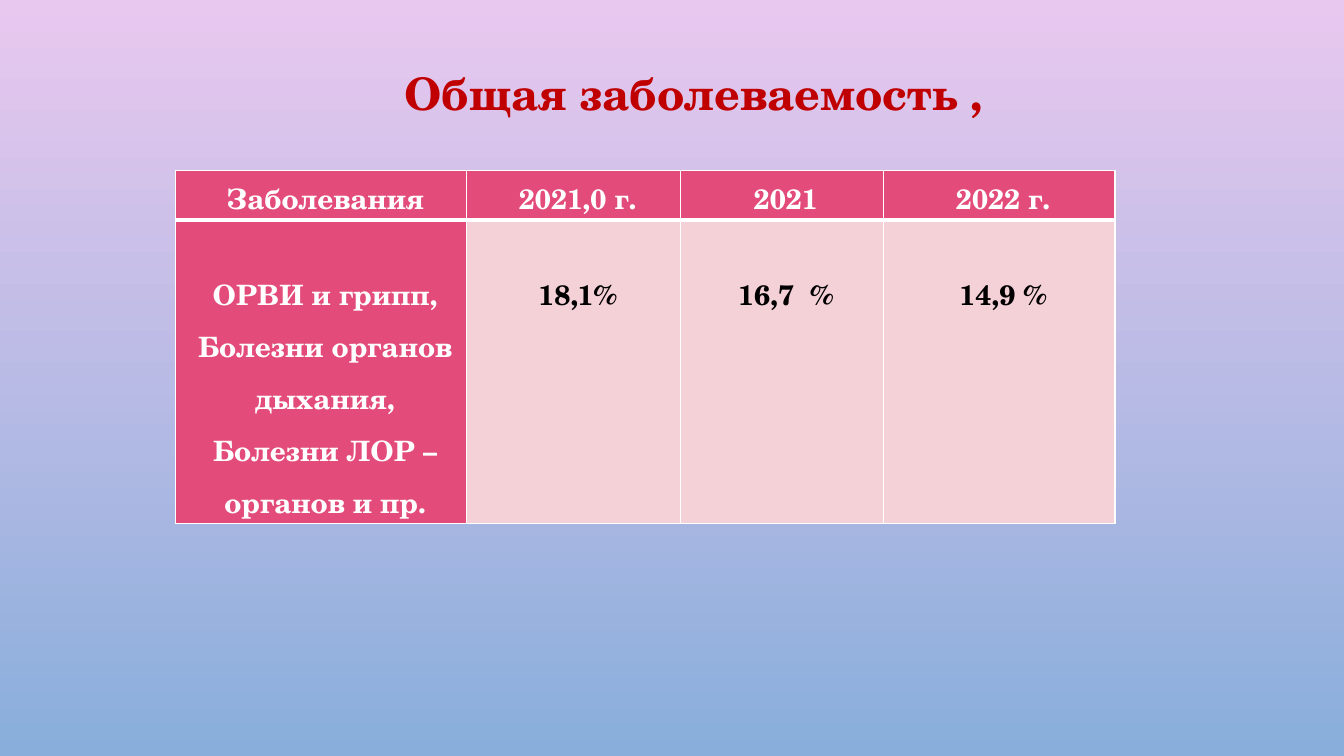
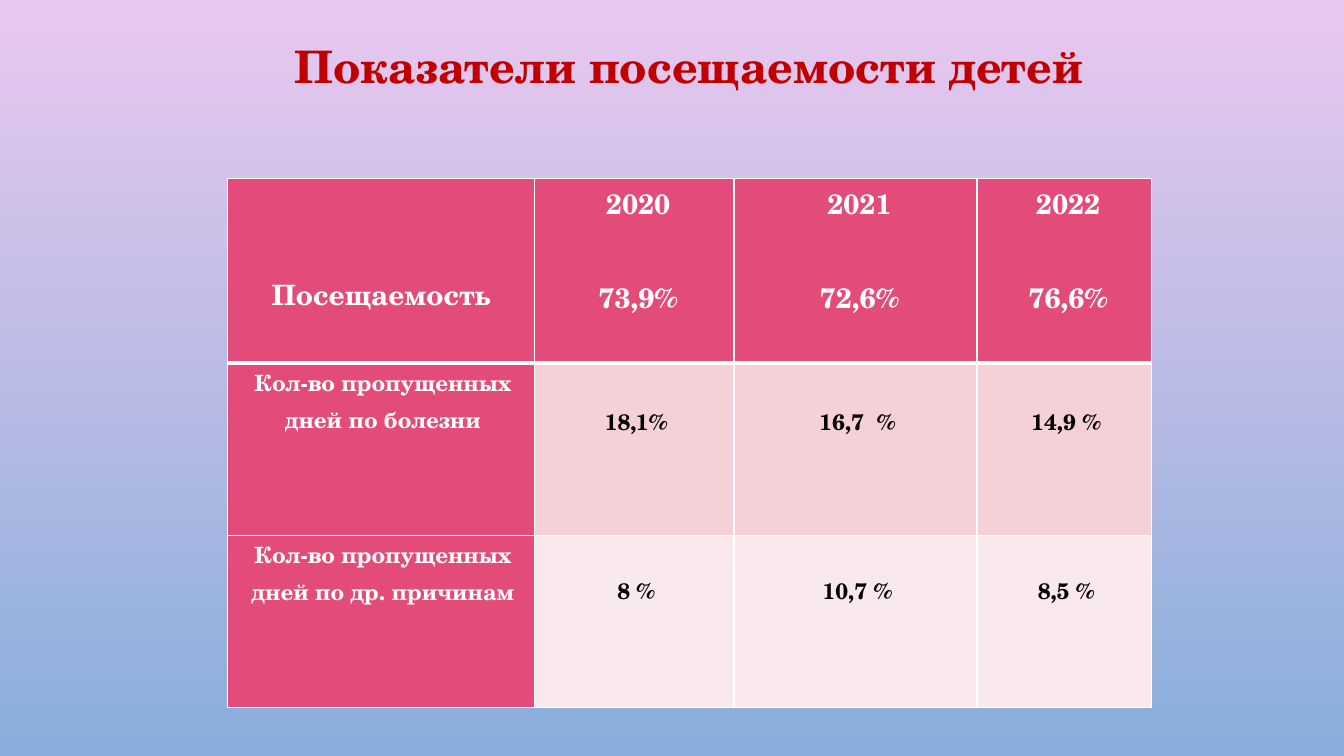
from dataclasses import dataclass

from lxml import etree
from pptx import Presentation
from pptx.dml.color import RGBColor
from pptx.enum.text import MSO_ANCHOR, MSO_AUTO_SIZE, PP_ALIGN
from pptx.oxml.ns import qn
from pptx.util import Inches, Pt

CENTER = PP_ALIGN.CENTER
MIDDLE = MSO_ANCHOR.MIDDLE
TOP = MSO_ANCHOR.TOP
FIXED = MSO_AUTO_SIZE.NONE

FACE = "TeX Gyre Schola"
WHITE, BLACK, RED = "FFFFFF", "000000", "C00000"
PINK, ROSE, PALE = "E34B7A", "F4D0D7", "FAE9EC"
SKY = ("E9C8EF", "89AEDB")
THIN, THICK = 1, 3
TITLE_SIZE = 32
FRAME = {"word_wrap": True, "auto_size": FIXED, "vertical_anchor": MIDDLE}
CELL = {
    "margin_left": Inches(0.07),
    "margin_right": Inches(0.07),
    "margin_bottom": 0,
    "vertical_anchor": TOP,
}


@dataclass(frozen=True)
class Row:
    texts: tuple[str, ...]
    height: float
    fill: str
    size: int = 20
    pitch: float = 1.2
    indent: float = 0.08
    drops: tuple[float, float] = (0, 0)
    gap: float = 0


@dataclass(frozen=True)
class Page:
    title: str
    box: tuple[float, float, float, float]
    shift: float
    left: float
    top: float
    widths: tuple[float, ...]
    rows: tuple[Row, ...]


PAGES = (
    Page(
        "Общая заболеваемость , ", (3.01, 0.6, 7.37, 0.64), 0.5,
        1.74, 1.69, (2.89, 2.12, 2.01, 2.3),
        (
            Row(("Заболевания", "2021,0 г.", "2021", "2022 г."), 0.49, PINK, pitch=1.15),
            Row(
                ("ОРВИ и грипп, Болезни органов дыхания, Болезни ЛОР – органов и пр.",
                 "18,1%", "16,7  %", "14,9 %"),
                3.01, ROSE, drops=(0.43, 0.43),
            ),
        ),
    ),
    Page(
        "Показатели посещаемости детей", (2.26, 0.33, 9.15, 0.64), 0,
        2.26, 1.77, (3.04, 1.98, 2.41, 1.73),
        (
            Row(("Посещаемость ", "2020\n73,9%", "2021\n72,6%", "2022\n76,6%"),
                1.83, PINK, pitch=1.07, drops=(0.9, 0), gap=34),
            Row(("Кол-во пропущенных дней по болезни", "18,1%", "16,7  %", "14,9 %"),
                1.71, ROSE, 16, 1.07, 0.04, (0, 0.39)),
            Row(("Кол-во пропущенных дней по др. причинам", "8 %", "10,7 %", "8,5 %"),
                1.71, PALE, 16, 1.07, 0.04, (0, 0.35)),
        ),
    ),
)


def tint(value: str) -> RGBColor:
    return RGBColor.from_string(value)


def apply(target, values: dict) -> None:
    for name, value in values.items():
        setattr(target, name, value)


def style(para, size: int, hue: str, pitch: float = 1, indent: float = 0, shift: float = 0) -> None:
    props = para._p.get_or_add_pPr()
    props.set("marL", str(Inches(indent)))
    props.set("indent", str(Inches(shift)))
    apply(para, {"alignment": CENTER, "line_spacing": pitch})
    for run in para.runs:
        apply(run.font, {"name": FACE, "size": Pt(size), "bold": True})
        run.font.color.rgb = tint(hue)


def edge(cell, first: bool, second: bool) -> None:
    props = cell._tc.get_or_add_tcPr()
    sides = {
        "a:lnL": THIN,
        "a:lnR": THIN,
        "a:lnT": THICK if second else THIN,
        "a:lnB": THICK if first else THIN,
    }
    for tag, width in sides.items():
        line = etree.SubElement(props, qn(tag), w=str(Pt(width)))
        fill = etree.SubElement(line, qn("a:solidFill"))
        etree.SubElement(fill, qn("a:srgbClr"), val=WHITE)


def draw_cell(cell, row: Row, down: int, across: int) -> None:
    head = down == 0 or across == 0
    edge(cell, down == 0, down == 1)
    cell.fill.solid()
    cell.fill.fore_color.rgb = tint(PINK if head else row.fill)
    apply(cell, CELL | {"margin_top": Inches(row.drops[min(across, 1)])})
    cell.text_frame.text = row.texts[across]
    for rank, para in enumerate(cell.text_frame.paragraphs):
        style(para, row.size, WHITE if head else BLACK, row.pitch, row.indent)
        if rank:
            para.space_before = Pt(row.gap)


def draw_grid(slide, page: Page) -> None:
    width = sum(page.widths)
    height = sum(row.height for row in page.rows)
    grid = slide.shapes.add_table(
        len(page.rows), len(page.widths),
        Inches(page.left), Inches(page.top), Inches(width), Inches(height),
    ).table
    for part, size in zip(grid.columns, page.widths):
        part.width = Inches(size)
    for down, row in enumerate(page.rows):
        grid.rows[down].height = Inches(row.height)
        for across in range(len(page.widths)):
            draw_cell(grid.cell(down, across), row, down, across)


def draw_title(slide, page: Page) -> None:
    title = slide.shapes.title
    names = ("left", "top", "width", "height")
    apply(title, dict(zip(names, map(Inches, page.box))))
    apply(title.text_frame, FRAME)
    title.text_frame.text = page.title
    style(title.text_frame.paragraphs[0], TITLE_SIZE, RED, shift=page.shift)


def paint(master) -> None:
    fill = master.background.fill
    fill.gradient()
    fill.gradient_angle = 270
    for stop, hue in zip(fill.gradient_stops, SKY):
        stop.color.rgb = tint(hue)


def main() -> None:
    deck = Presentation()
    apply(deck, {"slide_width": Inches(13.33), "slide_height": Inches(7.5)})
    paint(deck.slide_master)
    for page in PAGES:
        slide = deck.slides.add_slide(deck.slide_layouts.get_by_name("Title Only"))
        draw_title(slide, page)
        draw_grid(slide, page)
    deck.save("out.pptx")


if __name__ == "__main__":
    main()
